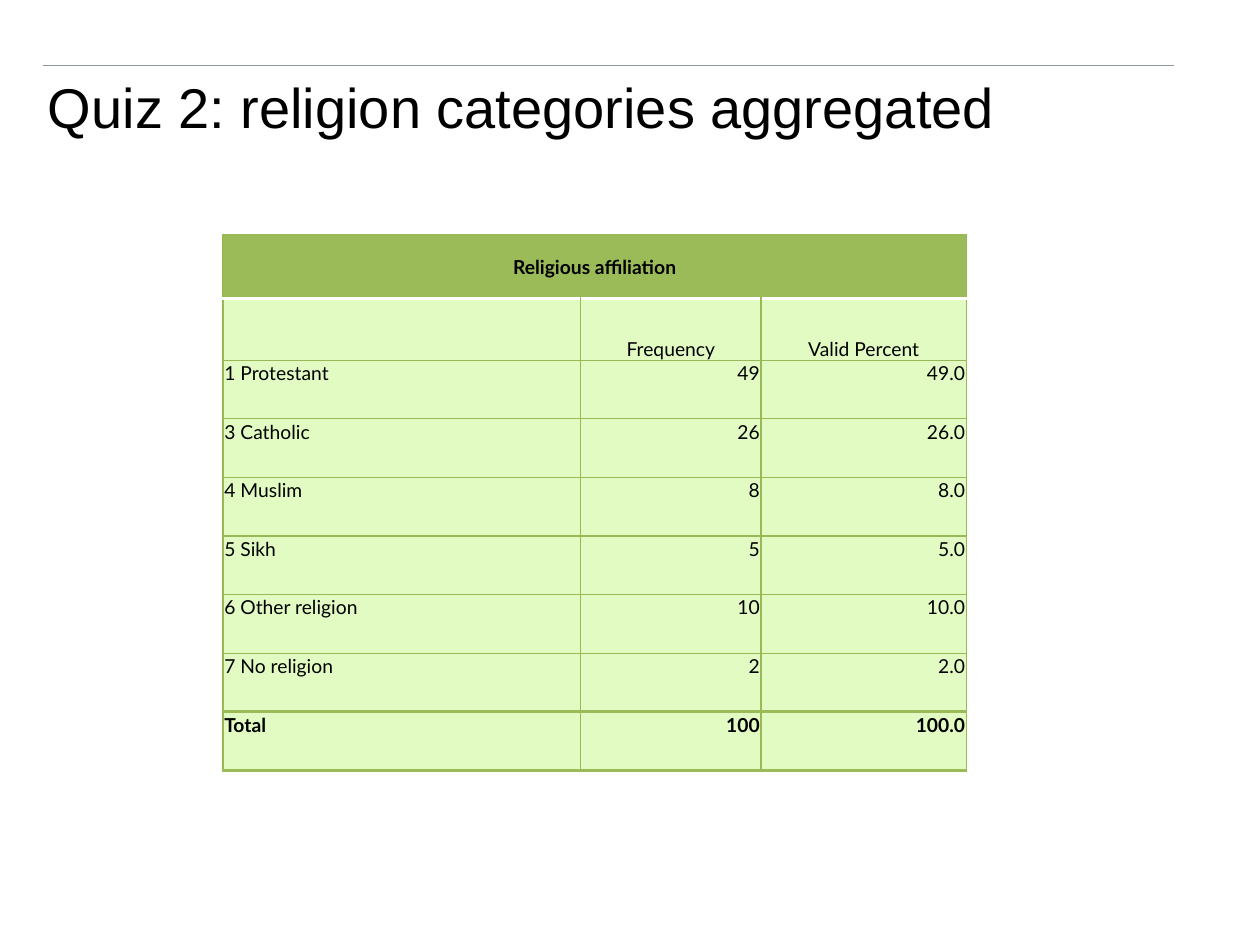
from pptx import Presentation
from pptx.dml.color import RGBColor
from pptx.enum.shapes import MSO_CONNECTOR
from pptx.enum.text import MSO_ANCHOR, PP_ALIGN
from pptx.oxml.ns import qn
from pptx.util import Inches, Pt
from lxml import etree

LEFT, CENTER, RIGHT = PP_ALIGN.LEFT, PP_ALIGN.CENTER, PP_ALIGN.RIGHT
TOP, MIDDLE, BOTTOM = MSO_ANCHOR.TOP, MSO_ANCHOR.MIDDLE, MSO_ANCHOR.BOTTOM
STRAIGHT = MSO_CONNECTOR.STRAIGHT


def rgb(value):
    return RGBColor.from_string(value)


def add_border(cell, side, color, width):
    tc_pr = cell._tc.get_or_add_tcPr()
    ln = etree.SubElement(tc_pr, qn(f"a:ln{side}"), w=str(Pt(width)))
    fill = etree.SubElement(ln, qn("a:solidFill"))
    etree.SubElement(fill, qn("a:srgbClr"), val=color)


prs = Presentation()
prs.slide_width, prs.slide_height = Inches(10), Inches(7.5)
s = prs.slides.add_slide(prs.slide_layouts[5])

rule = s.shapes.add_connector(
    STRAIGHT, Inches(0.34), Inches(0.52), Inches(9.32), Inches(0.52))
rule.line.color.rgb = rgb("8E959C")
rule.line.width = Pt(0.75)
etree.SubElement(rule._element.spPr, qn("a:effectLst"))

title = s.shapes.title
title.left, title.top = Inches(0.28), Inches(0.29)
title.width, title.height = Inches(9), Inches(1.1)
tf = title.text_frame
tf.text = "Quiz 2: religion categories aggregated"
tf.vertical_anchor = MIDDLE
p = tf.paragraphs[0]
p.alignment = LEFT
font = p.runs[0].font
font.name, font.size = "Arial", Pt(32)
font.color.rgb = rgb("000000")

rows = [
    ("Religious affiliation", "", ""),
    ("", "Frequency", "Valid Percent"),
    ("1 Protestant", "49", "49.0"),
    ("3 Catholic", "26", "26.0"),
    ("4 Muslim", "8", "8.0"),
    ("5 Sikh", "5", "5.0"),
    ("6 Other religion", "10", "10.0"),
    ("7 No religion", "2", "2.0"),
    ("Total", "100", "100.0"),
]
col_widths = [2.84, 1.43, 1.63]
row_heights = [0.51, 0.49] + [0.465] * 7
total = len(rows) - 1

table = s.shapes.add_table(
    len(rows), len(col_widths), Inches(1.77), Inches(1.86),
    Inches(sum(col_widths)), Inches(sum(row_heights))).table
for column, width in zip(table.columns, col_widths):
    column.width = Inches(width)
for row, height in zip(table.rows, row_heights):
    row.height = Inches(height)
table.cell(0, 0).merge(table.cell(0, 2))

thin, thick, white = ("98B955", 0.75), ("9BBB59", 2), ("FFFFFF", 2)
edges = [thin, white] + [thin] * 6 + [thick, thick]

for i, values in enumerate(rows):
    for j, value in enumerate(values):
        cell = table.cell(i, j)
        cell.margin_left = cell.margin_right = cell.margin_top = Inches(0.01)
        cell.margin_bottom = 0
        cell.vertical_anchor = {0: MIDDLE, 1: BOTTOM}.get(i, TOP)
        for side, edge in zip("LRTB", (thin, thin, edges[i], edges[i + 1])):
            add_border(cell, side, *edge)
        cell.fill.solid()
        cell.fill.fore_color.rgb = rgb("9BBB59" if i == 0 else "E2FBC2")
        cell.text = value
        p = cell.text_frame.paragraphs[0]
        p.alignment = CENTER if i < 2 else RIGHT if j else LEFT
        for font in [p.font] + [r.font for r in p.runs]:
            font.name, font.size = "Lato", Pt(11)
            font.bold = i in (0, total)
            font.color.rgb = rgb("000000")

prs.save("out.pptx")
